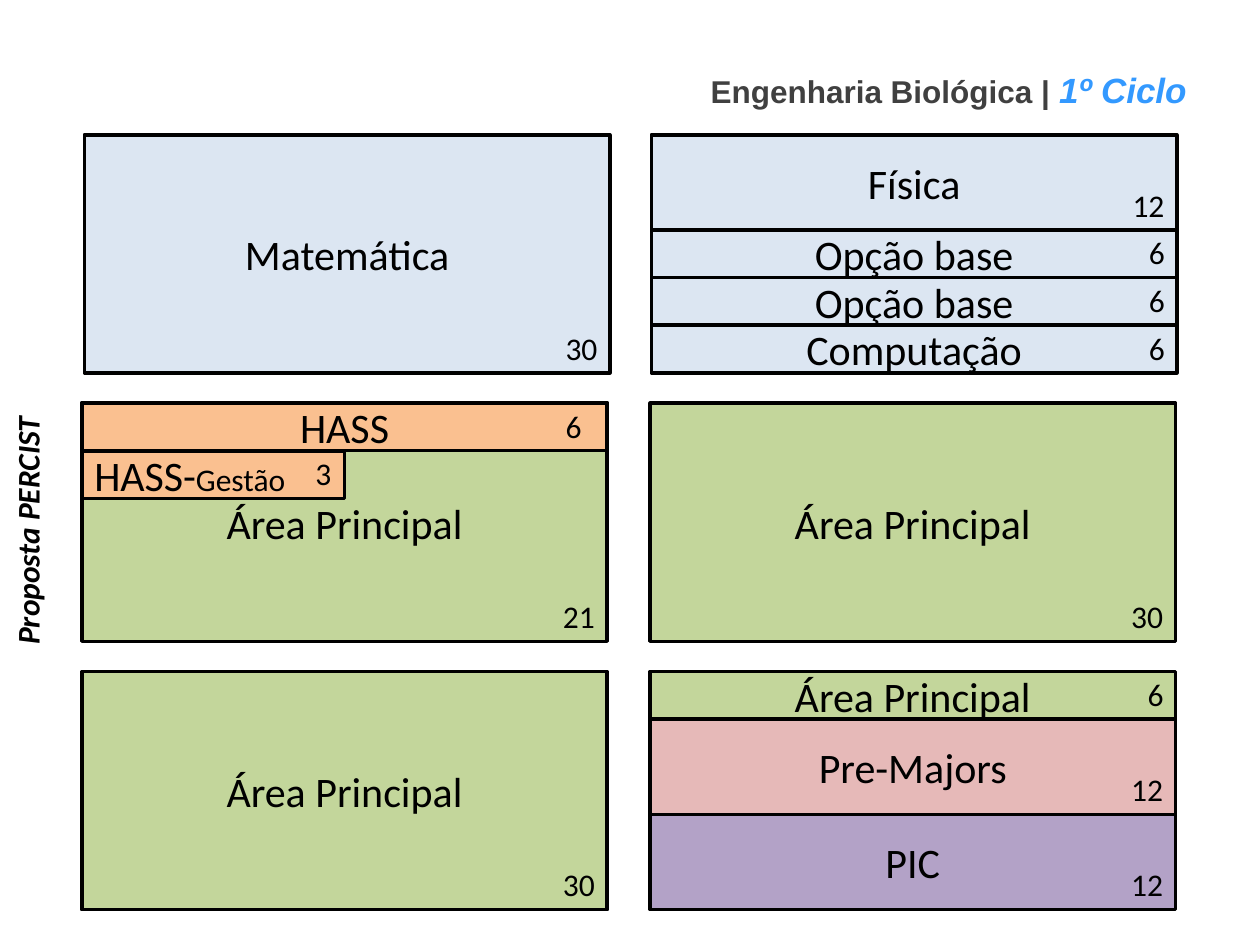
from dataclasses import dataclass

from pptx import Presentation
from pptx.dml.color import RGBColor
from pptx.enum import shapes, text
from pptx.util import Inches, Pt


@dataclass(frozen=True)
class Theme:
    body: str = "Calibri"
    heading: str = "Arial"
    label: int = 24
    small: int = 18
    cycle: int = 20
    black: str = "000000"
    gray: str = "404040"
    accent: str = "3399FF"
    base: str = "DCE6F2"
    main: str = "C3D69B"
    hass: str = "FAC090"
    majors: str = "E6B9B8"
    project: str = "B3A2C7"


@dataclass(frozen=True)
class Course:
    label: str
    color: str
    start: int
    span: int
    credits: int
    detail: str = ""
    share: float = 1
    number_shift: float = 0.01


theme = Theme()
WIDTH, CREDIT_HEIGHT = 4.17, 0.063
FIRST_TOP, ROW_PITCH = 1.07, 2.13
NUMBER_HEIGHT = 0.4
NUMBER_WIDTHS = {1: 0.33, 2: 0.46}

rows = [
    [
        (0.67, [Course("Matemática", theme.base, 0, 30, 30)]),
        (5.17, [
            Course("Física", theme.base, 0, 12, 12),
            Course("Opção base", theme.base, 12, 6, 6),
            Course("Opção base", theme.base, 18, 6, 6),
            Course("Computação", theme.base, 24, 6, 6),
        ]),
    ],
    [
        (0.65, [
            Course("Área Principal", theme.main, 0, 30, 21),
            Course("HASS", theme.hass, 0, 6, 6, number_shift=-0.1),
            Course("HASS-", theme.hass, 6, 6, 3, "Gestão", 0.5, 0),
        ]),
        (5.16, [Course("Área Principal", theme.main, 0, 30, 30)]),
    ],
    [
        (0.65, [Course("Área Principal", theme.main, 0, 30, 30)]),
        (5.16, [
            Course("Área Principal", theme.main, 0, 6, 6),
            Course("Pre-Majors", theme.majors, 6, 12, 12),
            Course("PIC", theme.project, 18, 12, 12),
        ]),
    ],
]


def add_span(para, words, size, font=theme.body, color=theme.black, bold=None, italic=None):
    span = para.add_run()
    span.text = words
    span.font.name = font
    span.font.size = Pt(size)
    span.font.bold = bold
    span.font.italic = italic
    span.font.color.rgb = RGBColor.from_string(color)


def add_text_box(page, left, top, width, height, wrap=False):
    box = page.shapes.add_textbox(Inches(left), Inches(top), Inches(width), Inches(height))
    box.text_frame.word_wrap = wrap
    return box


def add_block(page, left, top, course):
    box = page.shapes.add_shape(
        shapes.MSO_SHAPE.RECTANGLE, Inches(left), Inches(top),
        Inches(WIDTH * course.share), Inches(course.span * CREDIT_HEIGHT))
    box.shadow.inherit = False
    box.fill.solid()
    box.fill.fore_color.rgb = RGBColor.from_string(course.color)
    box.line.color.rgb = RGBColor.from_string(theme.black)
    box.line.width = Pt(2)
    box.text_frame.vertical_anchor = text.MSO_ANCHOR.MIDDLE
    para = box.text_frame.paragraphs[0]
    para.alignment = text.PP_ALIGN.LEFT if course.detail else text.PP_ALIGN.CENTER
    add_span(para, course.label, theme.label)
    if course.detail:
        add_span(para, course.detail, theme.small)


def add_number(page, left, top, course):
    number = str(course.credits)
    width = NUMBER_WIDTHS[len(number)]
    right = left + WIDTH * course.share + course.number_shift
    bottom = top + course.span * CREDIT_HEIGHT
    box = add_text_box(page, right - width, bottom - NUMBER_HEIGHT, width, NUMBER_HEIGHT)
    add_span(box.text_frame.paragraphs[0], number, theme.small)


def add_title(page):
    box = add_text_box(page, 5.06, 0.29, 4.94, 0.68, wrap=True)
    box.text_frame.vertical_anchor = text.MSO_ANCHOR.MIDDLE
    para = box.text_frame.paragraphs[0]
    para.alignment = text.PP_ALIGN.CENTER
    para.line_spacing = 1.5
    add_span(para, "Engenharia Biológica | ", theme.small, theme.heading, theme.gray, True)
    add_span(para, "1º Ciclo", theme.cycle, theme.heading, theme.accent, True, True)


def add_side_label(page):
    box = add_text_box(page, -0.8, 4, 2.03, 0.4)
    box.rotation = 270
    add_span(box.text_frame.paragraphs[0], "Proposta PERCIST", theme.small, bold=True, italic=True)


def main():
    deck = Presentation()
    deck.slide_width, deck.slide_height = Inches(10), Inches(7.5)
    page = deck.slides.add_slide(deck.slide_layouts[6])
    add_title(page)
    placed = [
        (left, FIRST_TOP + row * ROW_PITCH + course.start * CREDIT_HEIGHT, course)
        for row, semesters in enumerate(rows)
        for left, courses in semesters
        for course in courses
    ]
    for place in placed:
        add_block(page, *place)
    add_side_label(page)
    for place in placed:
        add_number(page, *place)
    deck.save("out.pptx")


if __name__ == "__main__":
    main()
